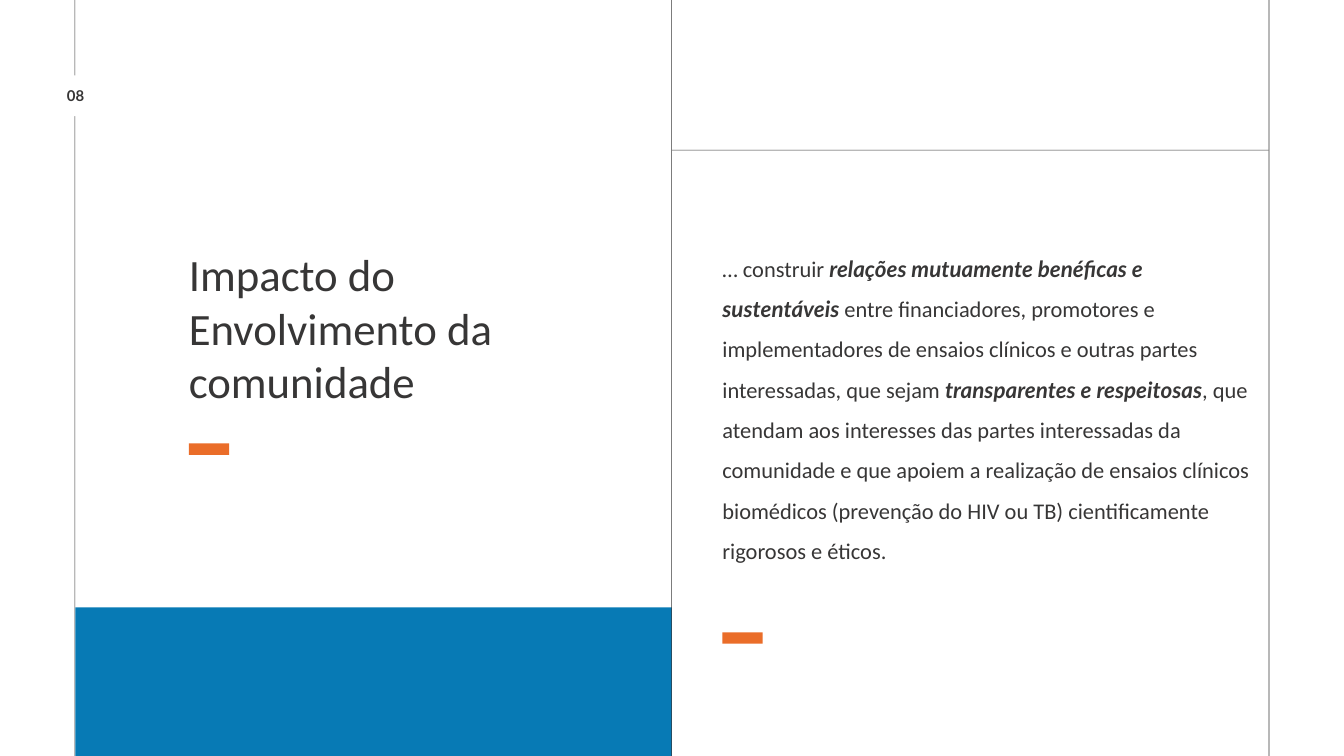
from dataclasses import dataclass

from pptx import Presentation
from pptx.dml.color import RGBColor
from pptx.enum.shapes import MSO_SHAPE
from pptx.enum.text import MSO_ANCHOR, PP_ALIGN
from pptx.slide import Slide
from pptx.util import Inches, Pt

RECTANGLE = MSO_SHAPE.RECTANGLE
TOP = MSO_ANCHOR.TOP
LEFT, CENTER = PP_ALIGN.LEFT, PP_ALIGN.CENTER

WIDTH, HEIGHT = 20, 11.25
RULE = 0.01
COLUMN_LEFTS = (1.11, 9.99, 18.88)
COLUMN_WIDTH = 8.88
TITLE_LEFT, BODY_LEFT = 2.81, 10.75

TITLE = "Impacto do Envolvimento da comunidade"
BODY = (
    ("… construir ", False),
    ("relações mutuamente benéficas e sustentáveis", True),
    (" entre financiadores, promotores e implementadores de ensaios clínicos "
     "e outras partes interessadas, que sejam ", False),
    ("transparentes e respeitosas", True),
    (", que atendam aos interesses das partes interessadas da comunidade e que "
     "apoiem a realização de ensaios clínicos biomédicos (prevenção do HIV ou TB) "
     "cientificamente rigorosos e éticos.", False),
)


def color(value):
    """Turn a hex string into a colour."""
    return RGBColor.from_string(value)


def add_run(paragraph, text, *, size, font, ink, bold=False, italic=False):
    """Append formatted text to a paragraph."""
    run = paragraph.add_run()
    run.text = text
    run.font.size = Pt(size)
    run.font.name = font
    run.font.bold = bold
    run.font.italic = italic
    run.font.color.rgb = color(ink)


@dataclass
class SlideBuilder:
    """Hold the style and the current slide."""

    slide: Slide
    ink: str = "373636"
    accent: str = "EA6D29"
    panel: str = "077AB5"
    paper: str = "FFFFFF"
    plain_font: str = "Calibri"
    strong_font: str = "Lato"

    def block(self, left, top, width, height, fill):
        """Draw a filled rectangle without an outline."""
        shape = self.slide.shapes.add_shape(
            RECTANGLE, Inches(left), Inches(top), Inches(width), Inches(height))
        shape.shadow.inherit = False
        shape.fill.solid()
        shape.fill.fore_color.rgb = color(fill)
        shape.line.fill.background()

    def column_rule(self, left):
        """Draw a thin rule down the whole slide."""
        self.block(left, 0, RULE, HEIGHT, self.ink)

    def accent_bar(self, left, top):
        """Draw the short bar that closes a text."""
        self.block(left, top, 0.6, 0.17, self.accent)

    def text(self, left, top, width, height, parts, *, size, spacing, align=LEFT):
        """Write one paragraph from pairs of text and emphasis."""
        box = self.slide.shapes.add_textbox(
            Inches(left), Inches(top), Inches(width), Inches(height))
        frame = box.text_frame
        frame.word_wrap = True
        frame.vertical_anchor = TOP
        frame.margin_left = frame.margin_right = 0
        frame.margin_top = frame.margin_bottom = 0
        paragraph = frame.paragraphs[0]
        paragraph.alignment = align
        paragraph.line_spacing = Pt(spacing)
        for text, strong in parts:
            add_run(paragraph, text, size=size, ink=self.ink, bold=strong,
                    font=self.strong_font if strong else self.plain_font,
                    italic=strong and align == LEFT)

    def page_number(self, number):
        """Write the page number over a gap in the first rule."""
        self.block(0.69, 1.12, 0.86, 0.61, self.paper)
        self.text(0.76, 1.31, 0.73, 0.25, [(number, True)],
                  size=16, spacing=17.6, align=CENTER)


def main():
    """Build the slide and save it."""
    presentation = Presentation()
    presentation.slide_width = Inches(WIDTH)
    presentation.slide_height = Inches(HEIGHT)
    slide = presentation.slides.add_slide(presentation.slide_layouts[6])
    builder = SlideBuilder(slide)

    first, middle, last = COLUMN_LEFTS
    builder.column_rule(first)
    builder.page_number("08")
    builder.text(TITLE_LEFT, 3.67, 5.51, 2.36, [(TITLE, False)], size=48, spacing=57.6)
    builder.accent_bar(TITLE_LEFT, 6.6)
    builder.text(BODY_LEFT, 3.59, 7.92, 5.96, BODY, size=24, spacing=43.2)
    builder.accent_bar(BODY_LEFT, 9.41)
    builder.block(middle + RULE, 2.23, COLUMN_WIDTH, RULE, builder.ink)
    builder.block(first + RULE, 9.04, COLUMN_WIDTH, HEIGHT - 9.04, builder.panel)
    builder.column_rule(middle)
    builder.column_rule(last)

    presentation.save("out.pptx")


if __name__ == "__main__":
    main()
